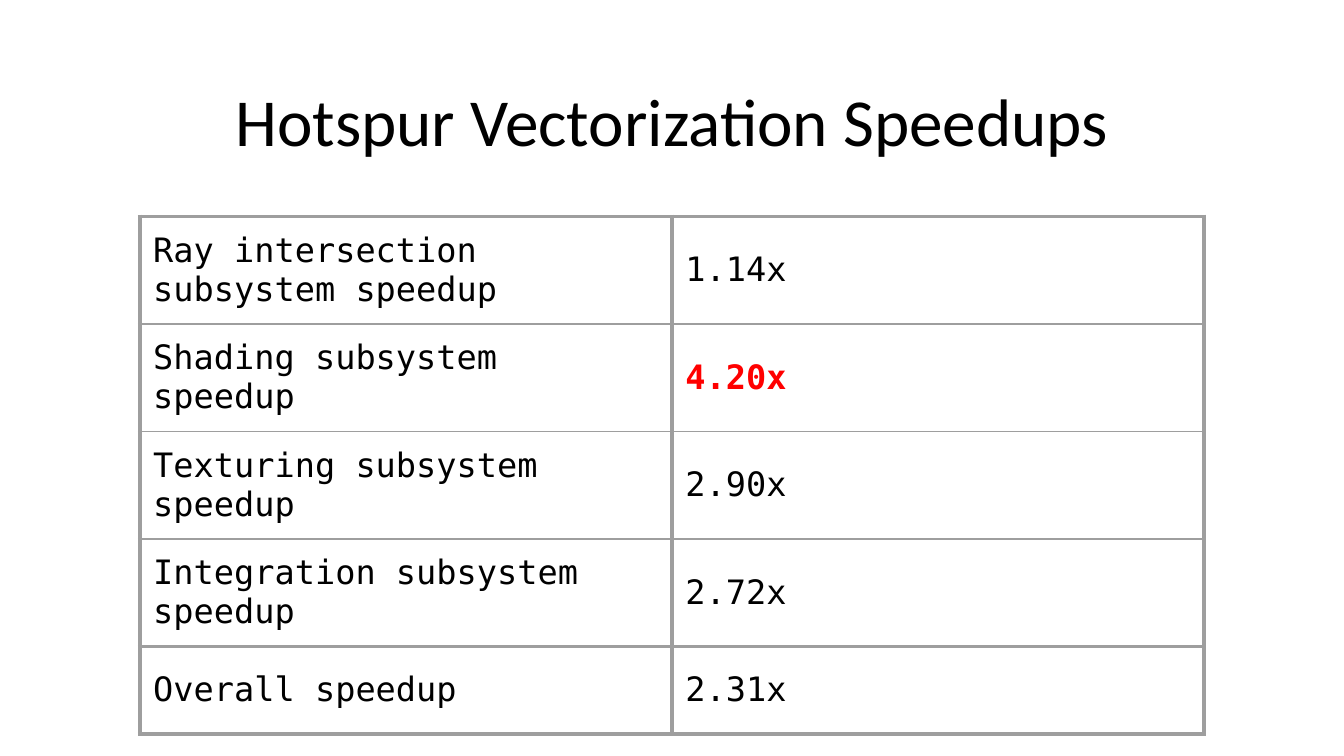
from lxml.etree import SubElement
from pptx import Presentation
from pptx.dml.color import RGBColor
from pptx.enum.text import MSO_ANCHOR, PP_ALIGN
from pptx.oxml.ns import qn
from pptx.util import Inches, Pt


def color(hex_code):
    return RGBColor.from_string(hex_code)


class SpeedupSlide:
    TITLE_FONT = "Calibri"
    TABLE_FONT = "DejaVu Sans Mono"
    TEXT, HIGHLIGHT, RULE = "000000", "FF0000", "9E9E9E"
    THICK, THIN = 2.25, 0.75
    INSET = Inches(0.1)

    def __init__(self, deck):
        self.slide = deck.slides.add_slide(deck.slide_layouts[6])

    def style(self, paragraph, name, size, hex_code, bold=False):
        font = paragraph.font
        font.name, font.size, font.bold = name, Pt(size), bold
        font.color.rgb = color(hex_code)

    def inset(self, holder):
        holder.margin_left = holder.margin_right = self.INSET
        holder.margin_top = holder.margin_bottom = self.INSET

    def title(self, text, left, top, width, height):
        box = self.slide.shapes.add_textbox(
            Inches(left), Inches(top), Inches(width), Inches(height))
        frame = box.text_frame
        frame.word_wrap = True
        frame.vertical_anchor = MSO_ANCHOR.TOP
        self.inset(frame)
        heading = frame.paragraphs[0]
        heading.text = text
        heading.alignment = PP_ALIGN.CENTER
        self.style(heading, self.TITLE_FONT, 36, self.TEXT)

    def borders(self, cell, top, bottom):
        properties = cell._tc.get_or_add_tcPr()
        widths = {"a:lnL": self.THICK, "a:lnR": self.THICK,
                  "a:lnT": top, "a:lnB": bottom}
        for position, (tag, width) in enumerate(widths.items()):
            line = SubElement(properties, qn(tag), w=str(Pt(width)))
            fill = SubElement(line, qn("a:solidFill"))
            SubElement(fill, qn("a:srgbClr"), val=self.RULE)
            properties.insert(position, line)  # borders come before the fill

    def table(self, rows, highlight, left, top, width, heights):
        grid = self.slide.shapes.add_table(
            len(rows), len(rows[0]), Inches(left), Inches(top),
            Inches(width), Inches(sum(heights))).table
        grid.first_row = grid.horz_banding = False
        # Thick rules frame the table and set off the last row
        inner = [self.THIN] * (len(rows) - 2)
        rules = [self.THICK, *inner, self.THICK, self.THICK]
        for r, (texts, height) in enumerate(zip(rows, heights)):
            grid.rows[r].height = Inches(height)
            for c, text in enumerate(texts):
                cell = grid.cell(r, c)
                cell.fill.background()
                cell.vertical_anchor = MSO_ANCHOR.MIDDLE
                self.inset(cell)
                self.borders(cell, rules[r], rules[r + 1])
                entry = cell.text_frame.paragraphs[0]
                entry.text = text
                strong = text == highlight
                self.style(entry, self.TABLE_FONT, 18,
                           self.HIGHLIGHT if strong else self.TEXT, strong)


def main():
    # Widescreen 16:9 page
    deck = Presentation()
    deck.slide_width, deck.slide_height = Inches(10), Inches(10 * 9 / 16)
    page = SpeedupSlide(deck)

    # Title
    page.title("Hotspur Vectorization Speedups", 0.34, 0.49, 9.32, 0.63)

    # Speedup per subsystem, then overall
    speedups = [
        ("Ray intersection subsystem speedup", "1.14x"),
        ("Shading subsystem speedup", "4.20x"),
        ("Texturing subsystem speedup", "2.90x"),
        ("Integration subsystem speedup", "2.72x"),
        ("Overall speedup", "2.31x"),
    ]
    page.table(speedups, "4.20x", 1.04, 1.61, 7.92, [0.8] * 4 + [0.65])

    deck.save("out.pptx")


if __name__ == "__main__":
    main()
